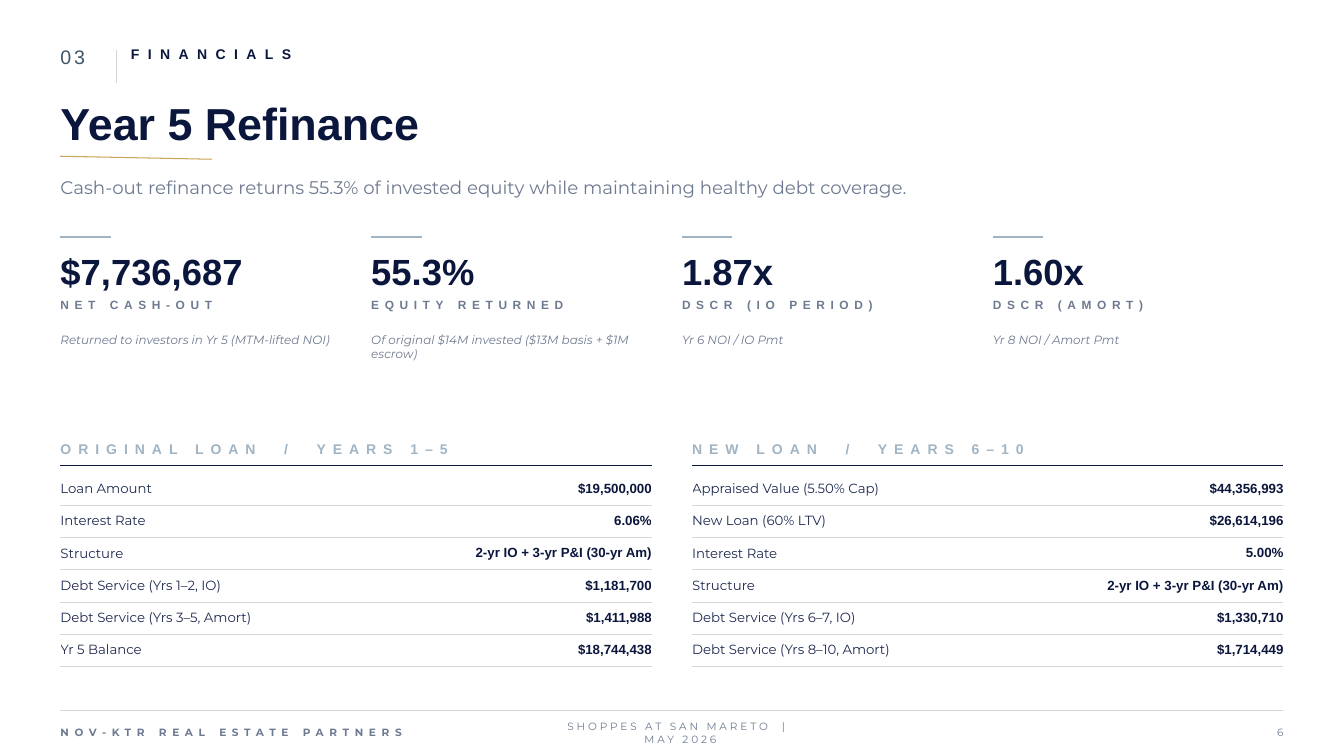
from lxml.etree import SubElement
from pptx import Presentation
from pptx.dml.color import RGBColor
from pptx.enum.shapes import MSO_CONNECTOR as Connector
from pptx.enum.text import MSO_ANCHOR as Anchor, PP_ALIGN as Align
from pptx.oxml.ns import qn
from pptx.util import Pt

COLORS = {"navy": "0B163C", "ink": "1E2A50", "slate": "3E5668", "gray": "6E7A90",
          "mist": "A0B4C3", "rule": "D4D6DC", "gold": "C9A557"}
HEADING, BODY = "Arial", "Montserrat"

METRICS = [
    ("$7,736,687", "NET CASH-OUT", "Returned to investors in Yr 5 (MTM-lifted NOI)"),
    ("55.3%", "EQUITY RETURNED", "Of original $14M invested ($13M basis + $1M escrow)"),
    ("1.87x", "DSCR (IO PERIOD)", "Yr 6 NOI / IO Pmt"),
    ("1.60x", "DSCR (AMORT)", "Yr 8 NOI / Amort Pmt"),
]
LOANS = [
    ("ORIGINAL LOAN  /  YEARS 1–5", [
        ("Loan Amount", "$19,500,000"),
        ("Interest Rate", "6.06%"),
        ("Structure", "2-yr IO + 3-yr P&I (30-yr Am)"),
        ("Debt Service (Yrs 1–2, IO)", "$1,181,700"),
        ("Debt Service (Yrs 3–5, Amort)", "$1,411,988"),
        ("Yr 5 Balance", "$18,744,438"),
    ]),
    ("NEW LOAN  /  YEARS 6–10", [
        ("Appraised Value (5.50% Cap)", "$44,356,993"),
        ("New Loan (60% LTV)", "$26,614,196"),
        ("Interest Rate", "5.00%"),
        ("Structure", "2-yr IO + 3-yr P&I (30-yr Am)"),
        ("Debt Service (Yrs 6–7, IO)", "$1,330,710"),
        ("Debt Service (Yrs 8–10, Amort)", "$1,714,449"),
    ]),
]

SLIDE_WIDTH, SLIDE_HEIGHT = 960, 540
MARGIN = 43.2
CONTENT_WIDTH = SLIDE_WIDTH - 2 * MARGIN
RIGHT = SLIDE_WIDTH - MARGIN
METRIC_GAP, LOAN_GAP = 14.4, 28.8
METRIC_WIDTH = (CONTENT_WIDTH - METRIC_GAP * (len(METRICS) - 1)) / len(METRICS)
LOAN_WIDTH = (CONTENT_WIDTH - LOAN_GAP) / 2
TABLE_TOP, ROW_HEIGHT = 337.68, 23.04
LABEL_SHARE = 0.6


def write(text_frame, text, size, font_name, color, bold=False, italic=False,
          spacing=0, align=Align.LEFT):
    text_frame.text = text
    paragraph = text_frame.paragraphs[0]
    paragraph.alignment = align
    run = paragraph.runs[0]
    font = run.font
    font.size, font.name, font.bold, font.italic = Pt(size), font_name, bold, italic
    font.color.rgb = RGBColor.from_string(COLORS[color])
    if spacing:
        run._r.get_or_add_rPr().set("spc", str(spacing * 100))


def add_text(slide, left, top, width, height, *style, anchor=Anchor.TOP, **options):
    shape = slide.shapes.add_textbox(Pt(left), Pt(top), Pt(width), Pt(height))
    text_frame = shape.text_frame
    text_frame.word_wrap = True
    text_frame.vertical_anchor = anchor
    text_frame.margin_left = text_frame.margin_right = 0
    text_frame.margin_top = text_frame.margin_bottom = 0
    write(text_frame, *style, **options)


def add_line(slide, x1, y1, x2, y2, color, weight):
    line = slide.shapes.add_connector(Connector.STRAIGHT, Pt(x1), Pt(y1), Pt(x2), Pt(y2))
    line.line.color.rgb = RGBColor.from_string(COLORS[color])
    line.line.width = Pt(weight)
    SubElement(line._element.spPr, qn("a:effectLst"))


def add_header(slide):
    add_text(slide, MARGIN, 32.4, 50.4, 32.4, "03", 14, HEADING, "slate", spacing=2)
    add_line(slide, 82.8, 36, 82.8, 59.04, "rule", 0.6)
    add_text(slide, 93.6, 32.4, 504, 28.8, "FINANCIALS", 10, HEADING, "navy",
             bold=True, spacing=6)
    add_text(slide, MARGIN, 68.4, CONTENT_WIDTH, 61.2, "Year 5 Refinance", 32, HEADING,
             "navy", bold=True)
    add_line(slide, MARGIN, 111.6, 151.2, 113.76, "gold", 0.75)
    add_text(slide, MARGIN, 126, CONTENT_WIDTH, 28.8,
             "Cash-out refinance returns 55.3% of invested equity while maintaining "
             "healthy debt coverage.", 13, BODY, "gray")


def add_metric(slide, left, value, label, note):
    add_line(slide, left, 169.2, left + 36, 169.2, "mist", 1.2)
    add_text(slide, left, 177.84, METRIC_WIDTH, 30.96, value, 26, HEADING, "navy", bold=True)
    add_text(slide, left, 212.4, METRIC_WIDTH, 25.2, label, 8.5, HEADING, "gray",
             bold=True, spacing=4)
    add_text(slide, left, 237.6, METRIC_WIDTH, 21.6, note, 8.5, BODY, "gray", italic=True)


def add_loan(slide, left, title, rows):
    add_text(slide, left, 309.6, LOAN_WIDTH, 21.6, title, 10, HEADING, "mist",
             bold=True, spacing=5, anchor=Anchor.MIDDLE)
    add_line(slide, left, 332.64, left + LOAN_WIDTH, 332.64, "navy", 0.6)
    table = slide.shapes.add_table(len(rows), 2, Pt(left), Pt(TABLE_TOP), Pt(LOAN_WIDTH),
                                   Pt(ROW_HEIGHT * len(rows))).table
    table.first_row = table.horz_banding = False
    table.columns[0].width = Pt(LOAN_WIDTH * LABEL_SHARE)
    table.columns[1].width = Pt(LOAN_WIDTH * (1 - LABEL_SHARE))
    for row_index, (label, value) in enumerate(rows):
        table.rows[row_index].height = Pt(ROW_HEIGHT)
        label_cell, value_cell = table.rows[row_index].cells
        write(label_cell.text_frame, label, 9.5, BODY, "ink")
        write(value_cell.text_frame, value, 9.5, HEADING, "navy", bold=True, align=Align.RIGHT)
        for cell in (label_cell, value_cell):
            cell.margin_left = cell.margin_right = 0
            cell.margin_top = cell.margin_bottom = 0
            cell.vertical_anchor = Anchor.MIDDLE
            cell.fill.background()
        rule_y = TABLE_TOP + ROW_HEIGHT * (row_index + 1)
        add_line(slide, left, rule_y, left + LOAN_WIDTH, rule_y, "rule", 0.3)


def add_footer(slide):
    add_line(slide, MARGIN, 507.6, RIGHT, 507.6, "rule", 0.5)
    for left, width, text, bold, spacing, align in (
        (MARGIN, 360, "NOV-KTR REAL ESTATE PARTNERS", True, 4, Align.LEFT),
        (396, 180, "SHOPPES AT SAN MARETO  |  MAY 2026", False, 2, Align.CENTER),
        (RIGHT - 72, 72, "6", False, 2, Align.RIGHT),
    ):
        add_text(slide, left, 512.64, width, 21.6, text, 7.5, BODY, "gray", bold=bold,
                 spacing=spacing, align=align, anchor=Anchor.MIDDLE)


def main():
    presentation = Presentation()
    presentation.slide_width, presentation.slide_height = Pt(SLIDE_WIDTH), Pt(SLIDE_HEIGHT)
    slide = presentation.slides.add_slide(presentation.slide_layouts[6])
    add_header(slide)
    for index, metric in enumerate(METRICS):
        add_metric(slide, MARGIN + index * (METRIC_WIDTH + METRIC_GAP), *metric)
    for index, loan in enumerate(LOANS):
        add_loan(slide, MARGIN + index * (LOAN_WIDTH + LOAN_GAP), *loan)
    add_footer(slide)
    presentation.save("out.pptx")


if __name__ == "__main__":
    main()
